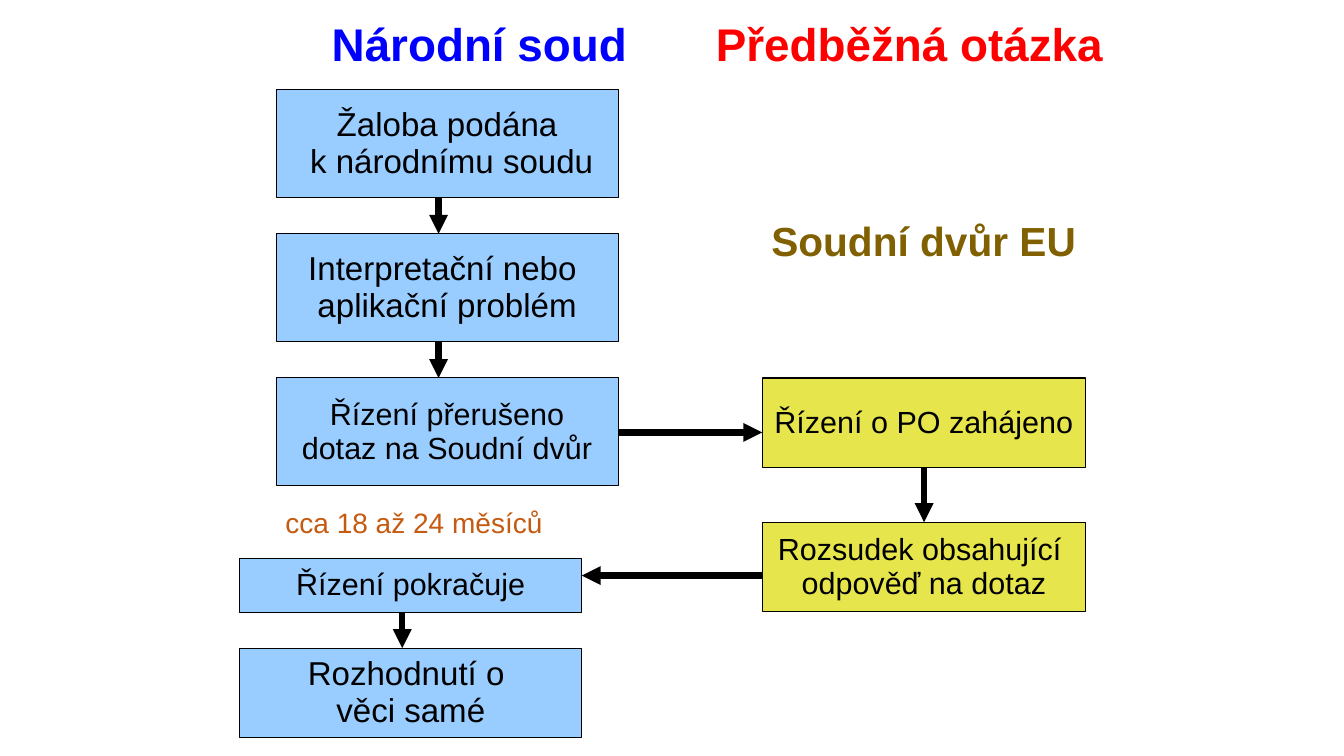
from dataclasses import dataclass

from lxml.etree import SubElement
from pptx import Presentation
from pptx.dml.color import RGBColor as Rgb
from pptx.enum.shapes import MSO_CONNECTOR as Link, MSO_SHAPE as Form
from pptx.enum.text import MSO_ANCHOR as Anchor, PP_ALIGN as Align
from pptx.oxml.ns import qn
from pptx.slide import Slide
from pptx.text.text import TextFrame
from pptx.util import Inches, Pt


@dataclass(frozen=True)
class Theme:
    font: str = "Arial"
    black: str = "000000"
    blue: str = "99CCFF"
    yellow: str = "E6E64C"
    navy: str = "0000FF"
    red: str = "FF0000"
    brown: str = "806000"
    rust: str = "C55A11"
    title: float = 32.7
    head: float = 29
    note: float = 20
    large: float = 23.6
    small: float = 21.8
    edge: float = 0.75
    arrow: float = 4.5
    lead: float = 0.93


@dataclass(frozen=True)
class Box:
    left: float
    top: float
    width: float
    height: float
    fill: str
    size: float
    lines: tuple[str, ...]


@dataclass(frozen=True)
class Label:
    left: float
    top: float
    width: float
    height: float
    text: str
    size: float
    color: str
    bold: bool = False


@dataclass(frozen=True)
class Arrow:
    x1: float
    y1: float
    x2: float
    y2: float


T = Theme()
WIDE, SLIM = 3.39, 3.21
COURT, NEXT, UNION = 2.74, 2.38, 7.56
TOP, STEP, TALL, LOW = 0.89, 1.43, 1.07, 0.89
ROWS = [TOP + STEP * i for i in range(4)]
DOWN, LAST, MID = 4.35, 3.99, UNION + SLIM / 2

LABELS = [
    Label(3.2, 0.16, 3.2, 0.58, "Národní soud", T.title, T.navy, True),
    Label(7.01, 0.16, 4.2, 0.58, "Předběžná otázka", T.title, T.red, True),
    Label(UNION, 2.14, WIDE, 0.54, "Soudní dvůr EU", T.head, T.brown, True),
    Label(COURT, 5, SLIM, 0.4, "cca 18 až 24 měsíců", T.note, T.rust),
]

BOXES = [
    Box(COURT, ROWS[0], WIDE, TALL, T.blue, T.large,
        ("Žaloba podána", " k národnímu soudu")),
    Box(COURT, ROWS[1], WIDE, TALL, T.blue, T.large,
        ("Interpretační nebo ", "aplikační problém")),
    Box(COURT, ROWS[2], WIDE, TALL, T.blue, T.small,
        ("Řízení přerušeno", "dotaz na Soudní dvůr")),
    Box(UNION, ROWS[2], SLIM, LOW, T.yellow, T.small,
        ("Řízení o PO zahájeno",)),
    Box(UNION, ROWS[3], SLIM, LOW, T.yellow, T.small,
        ("Rozsudek obsahující ", "odpověď na dotaz")),
    Box(NEXT, 5.54, WIDE, 0.54, T.blue, T.small, ("Řízení pokračuje",)),
    Box(NEXT, 6.43, WIDE, LOW, T.blue, T.large,
        ("Rozhodnutí o ", "věci samé")),
]

ARROWS = [
    Arrow(DOWN, ROWS[0] + TALL, DOWN, ROWS[1]),
    Arrow(DOWN, ROWS[1] + TALL, DOWN, ROWS[2]),
    Arrow(COURT + WIDE, 4.29, UNION, 4.29),
    Arrow(MID, ROWS[2] + LOW, MID, ROWS[3]),
    Arrow(UNION, 5.71, NEXT + WIDE, 5.71),
    Arrow(LAST, 6.08, LAST, 6.43),
]


def write(frame: TextFrame, lines: tuple[str, ...], size: float,
          color: str, align: Align, bold: bool = False) -> None:
    frame.margin_left = frame.margin_right = Inches(0.09)
    frame.margin_top = frame.margin_bottom = Inches(0.04)
    for i, line in enumerate(lines):
        para = frame.add_paragraph() if i else frame.paragraphs[0]
        para.alignment = align
        para.line_spacing = T.lead
        run = para.add_run()
        run.text = line
        run.font.name = T.font
        run.font.size = Pt(size)
        run.font.bold = bold
        run.font.color.rgb = Rgb.from_string(color)


def draw_box(slide: Slide, box: Box) -> None:
    shape = slide.shapes.add_shape(
        Form.RECTANGLE, Inches(box.left), Inches(box.top),
        Inches(box.width), Inches(box.height))
    shape.shadow.inherit = False
    shape.fill.solid()
    shape.fill.fore_color.rgb = Rgb.from_string(box.fill)
    shape.line.color.rgb = Rgb.from_string(T.black)
    shape.line.width = Pt(T.edge)
    frame = shape.text_frame
    frame.word_wrap = False
    frame.vertical_anchor = Anchor.MIDDLE
    write(frame, box.lines, box.size, T.black, Align.CENTER)


def draw_label(slide: Slide, label: Label) -> None:
    shape = slide.shapes.add_textbox(
        Inches(label.left), Inches(label.top),
        Inches(label.width), Inches(label.height))
    frame = shape.text_frame
    frame.word_wrap = True
    write(frame, (label.text,), label.size, label.color, Align.LEFT, label.bold)


def draw_arrow(slide: Slide, arrow: Arrow) -> None:
    line = slide.shapes.add_connector(
        Link.STRAIGHT, Inches(arrow.x1), Inches(arrow.y1),
        Inches(arrow.x2), Inches(arrow.y2))
    line.line.color.rgb = Rgb.from_string(T.black)
    line.line.width = Pt(T.arrow)
    SubElement(line.line._get_or_add_ln(), qn("a:tailEnd"), type="triangle")
    SubElement(line._element.spPr, qn("a:effectLst"))


def main() -> None:
    deck = Presentation()
    deck.slide_width = Inches(13.33)
    deck.slide_height = Inches(7.5)
    slide = deck.slides.add_slide(deck.slide_layouts[6])
    for box in BOXES:
        draw_box(slide, box)
    for label in LABELS:
        draw_label(slide, label)
    for arrow in ARROWS:
        draw_arrow(slide, arrow)
    deck.save("out.pptx")


if __name__ == "__main__":
    main()
